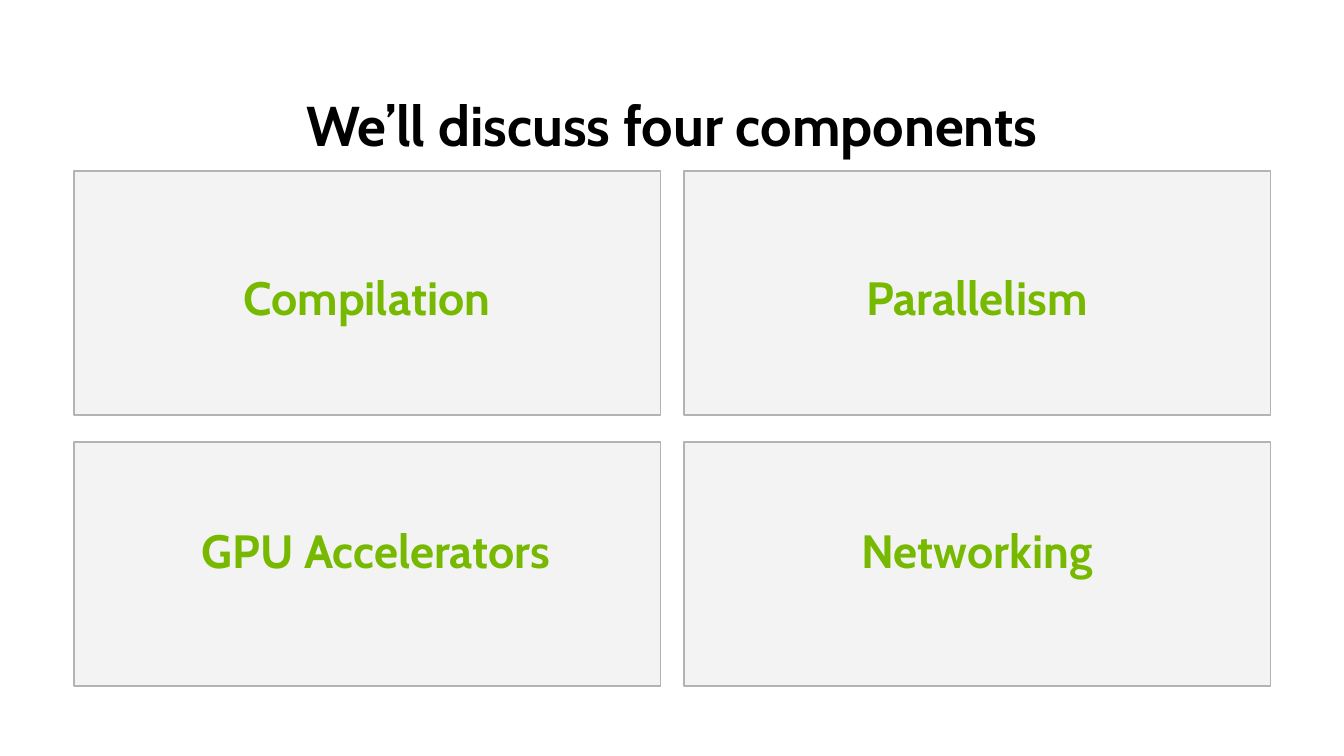
import pptx
import pptx.dml.color
import pptx.enum.shapes
import pptx.enum.text
import pptx.util

PX = 914400 / 112

BLACK = pptx.dml.color.RGBColor(0x00, 0x00, 0x00)
GREEN = pptx.dml.color.RGBColor(0x76, 0xB9, 0x00)
CARD_FILL = pptx.dml.color.RGBColor(0xF3, 0xF3, 0xF3)
CARD_EDGE = pptx.dml.color.RGBColor(0xB3, 0xB3, 0xB3)

HEADING_FONT = {"name": "Cabin", "bold": True, "size": pptx.util.Pt(36)}
LABEL_FONT = {"name": "Cabin", "bold": True, "size": pptx.util.Pt(30)}

CARD_SIZE = (587, 244)
CARD_GAP = (23, 27)

# Each row: (label drop inside the card, [(component, label indent)])
COMPONENT_ROWS = [
    (87, [("Compilation", 55), ("Parallelism", 55)]),
    (69, [("GPU Accelerators", 64), ("Networking", 55)]),
]


def emu(*lengths):
    return [pptx.util.Emu(round(length * PX)) for length in lengths]


def add_heading(slide, box, wording, font_values, color):
    """Centred bold line that sits on the bottom of its box."""
    frame = slide.shapes.add_textbox(*emu(*box)).text_frame
    frame.word_wrap = True
    frame.vertical_anchor = pptx.enum.text.MSO_ANCHOR.BOTTOM
    line = frame.paragraphs[0]
    line.alignment = pptx.enum.text.PP_ALIGN.CENTER
    line.line_spacing = 0.9
    run = line.add_run()
    run.text = wording
    for attribute, value in font_values.items():
        setattr(run.font, attribute, value)
    run.font.color.rgb = color


def add_card(slide, box, component, indent, drop):
    """Grey panel with the component's name placed relative to it."""
    left, top, width, height = box
    panel = slide.shapes.add_shape(
        pptx.enum.shapes.MSO_SHAPE.RECTANGLE, *emu(*box))
    panel.shadow.inherit = False
    panel.fill.solid()
    panel.fill.fore_color.rgb = CARD_FILL
    panel.line.color.rgb = CARD_EDGE
    panel.line.width = pptx.util.Pt(0.75)
    add_heading(slide, (left + indent, top + drop, 476, 73),
                component, LABEL_FONT, GREEN)


def add_component_grid(slide, left, top):
    """Two by two cards with equal gaps."""
    width, height = CARD_SIZE
    for row, (drop, components) in enumerate(COMPONENT_ROWS):
        for column, (component, indent) in enumerate(components):
            box = (left + column * (width + CARD_GAP[0]),
                   top + row * (height + CARD_GAP[1]), width, height)
            add_card(slide, box, component, indent, drop)


def main():
    deck = pptx.Presentation()
    deck.slide_width, deck.slide_height = emu(1344, 756)
    slide = deck.slides.add_slide(deck.slide_layouts[6])

    # Title
    add_heading(slide, (61, 91, 1222, 73),
                "We’ll discuss four components", HEADING_FONT, BLACK)

    # Components
    add_component_grid(slide, 74, 171)

    deck.save("out.pptx")


if __name__ == "__main__":
    main()
